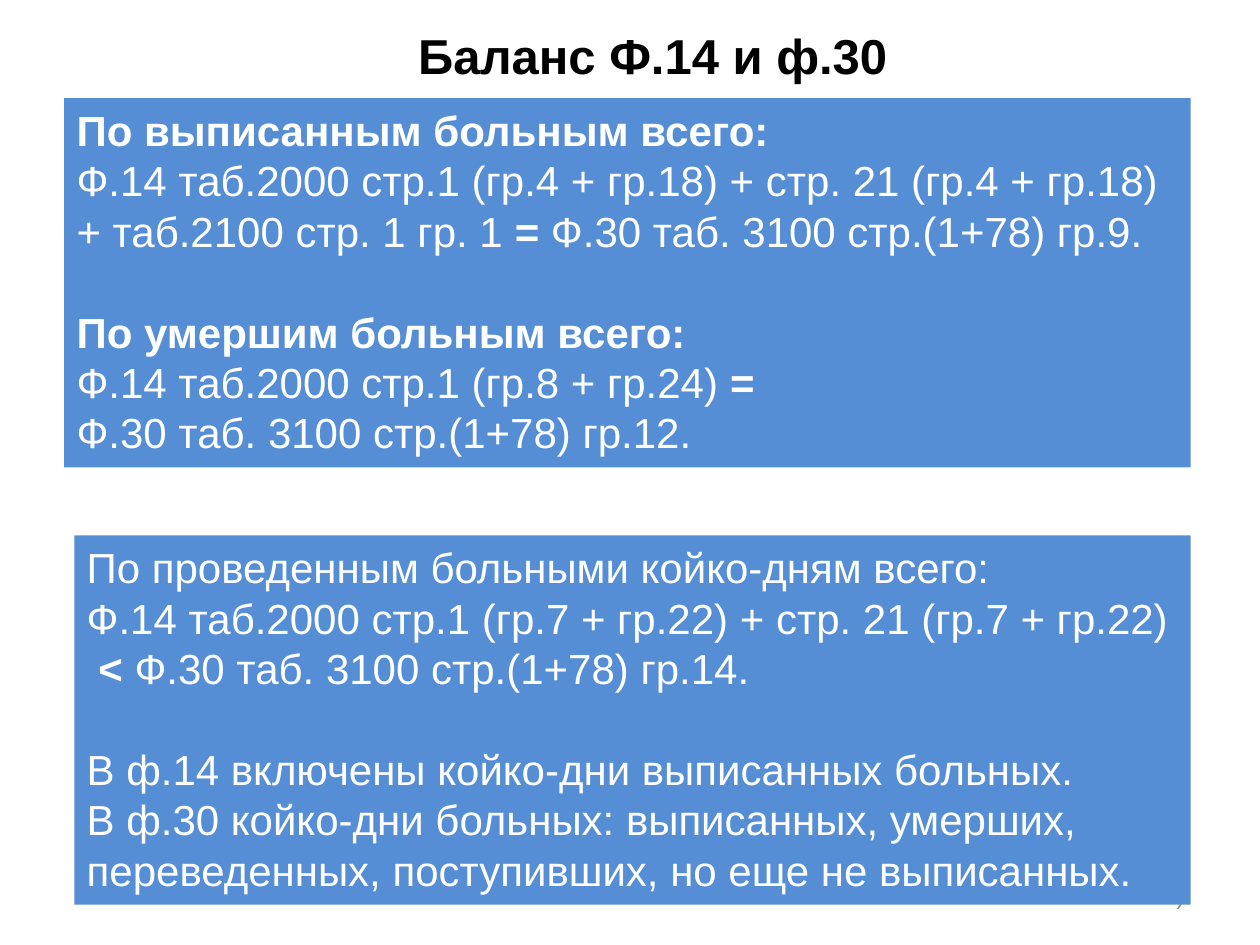
from pptx import Presentation
from pptx.dml.color import RGBColor
from pptx.enum.shapes import MSO_SHAPE
from pptx.enum.text import MSO_ANCHOR, MSO_AUTO_SIZE, PP_ALIGN
from pptx.util import Inches, Pt

RECTANGLE = MSO_SHAPE.RECTANGLE
TOP, MIDDLE = MSO_ANCHOR.TOP, MSO_ANCHOR.MIDDLE
FIXED, GROW = MSO_AUTO_SIZE.NONE, MSO_AUTO_SIZE.SHAPE_TO_FIT_TEXT
LEFT, CENTER, RIGHT = PP_ALIGN.LEFT, PP_ALIGN.CENTER, PP_ALIGN.RIGHT

TITLE_FONT = {"name": "Arial", "size": Pt(28), "bold": True}
BODY_FONT = {"name": "Arial", "size": Pt(24)}
NUMBER_FONT = {"name": "Calibri", "size": Pt(12)}
GROUP_GAP = Pt(28.8)

DISCHARGED_AND_DECEASED = [
    [
        [("По выписанным больным всего:", True)],
        [
            ("Ф.14 таб.2000 стр.1 (гр.4 + гр.18) + стр. 21 (гр.4 + гр.18) "
             "+ таб.2100 стр. 1 гр. 1 ", False),
            ("= ", True),
            ("Ф.30 таб. 3100 стр.(1+78) гр.9.", False),
        ],
    ],
    [
        [("По умершим больным всего:", True)],
        [("Ф.14 таб.2000 стр.1 (гр.8 + гр.24) ", False), ("=", True)],
        [("Ф.30 таб. 3100 стр.(1+78) гр.12.", False)],
    ],
]
BED_DAYS = [
    [
        [("По проведенным больными койко-дням всего:", False)],
        [
            ("Ф.14 таб.2000 стр.1 (гр.7 + гр.22) + стр. 21 (гр.7 + гр.22)  ", False),
            ("< ", True),
            ("Ф.30 таб. 3100 стр.(1+78) гр.14.", False),
        ],
    ],
    [
        [("В ф.14 включены койко-дни выписанных больных.", False)],
        [("В ф.30 койко-дни больных: выписанных, умерших, переведенных, "
          "поступивших, но еще не выписанных.", False)],
    ],
]


def color(value):
    """Turn a hex string into a colour."""
    return RGBColor.from_string(value)


def set_values(target, values):
    """Set each attribute named in a dict of format values."""
    for name, value in values.items():
        setattr(target, name, value)


def add_span(para, text, font, ink):
    """Append one formatted run to a paragraph."""
    span = para.add_run()
    span.text = text
    set_values(span.font, font)
    span.font.color.rgb = color(ink)


def add_label(page, box, text, font, ink, align, anchor, fit):
    """Place a single line of text in the given box."""
    frame = page.shapes.add_textbox(*map(Inches, box)).text_frame
    set_values(frame, {"word_wrap": True, "vertical_anchor": anchor, "auto_size": fit})
    para = frame.paragraphs[0]
    para.alignment = align
    add_span(para, text, font, ink)


def add_panel(page, box, groups):
    """Fill the given box with blue and stack groups of lines in it."""
    panel = page.shapes.add_shape(RECTANGLE, *map(Inches, box))
    panel.shadow.inherit = False
    panel.fill.solid()
    panel.fill.fore_color.rgb = color("558ED5")
    panel.line.fill.background()
    frame = panel.text_frame
    set_values(frame, {"word_wrap": True, "vertical_anchor": TOP, "auto_size": GROW})
    para = None
    for group in groups:
        for index, line in enumerate(group):
            starts_group = para is not None and index == 0
            para = frame.paragraphs[0] if para is None else frame.add_paragraph()
            para.alignment = LEFT
            if starts_group:
                para.space_before = GROUP_GAP
            for text, bold in line:
                add_span(para, text, {**BODY_FONT, "bold": bold}, "FFFFFF")


def main():
    """Build the slide and save the deck."""
    deck = Presentation()
    set_values(deck, {"slide_width": Inches(10), "slide_height": Inches(7.5)})
    page = deck.slides.add_slide(deck.slide_layouts[6])
    add_label(page, (7.17, 6.95, 2.33, 0.4), "9", NUMBER_FONT, "8C8C8C",
              RIGHT, MIDDLE, FIXED)
    add_label(page, (2.68, 0.15, 5, 0.57), "Баланс Ф.14 и ф.30", TITLE_FONT,
              "000000", CENTER, TOP, GROW)
    add_panel(page, (0.51, 0.78, 8.94, 2.93), DISCHARGED_AND_DECEASED)
    add_panel(page, (0.59, 4.25, 8.86, 2.93), BED_DAYS)
    deck.save("out.pptx")


if __name__ == "__main__":
    main()
